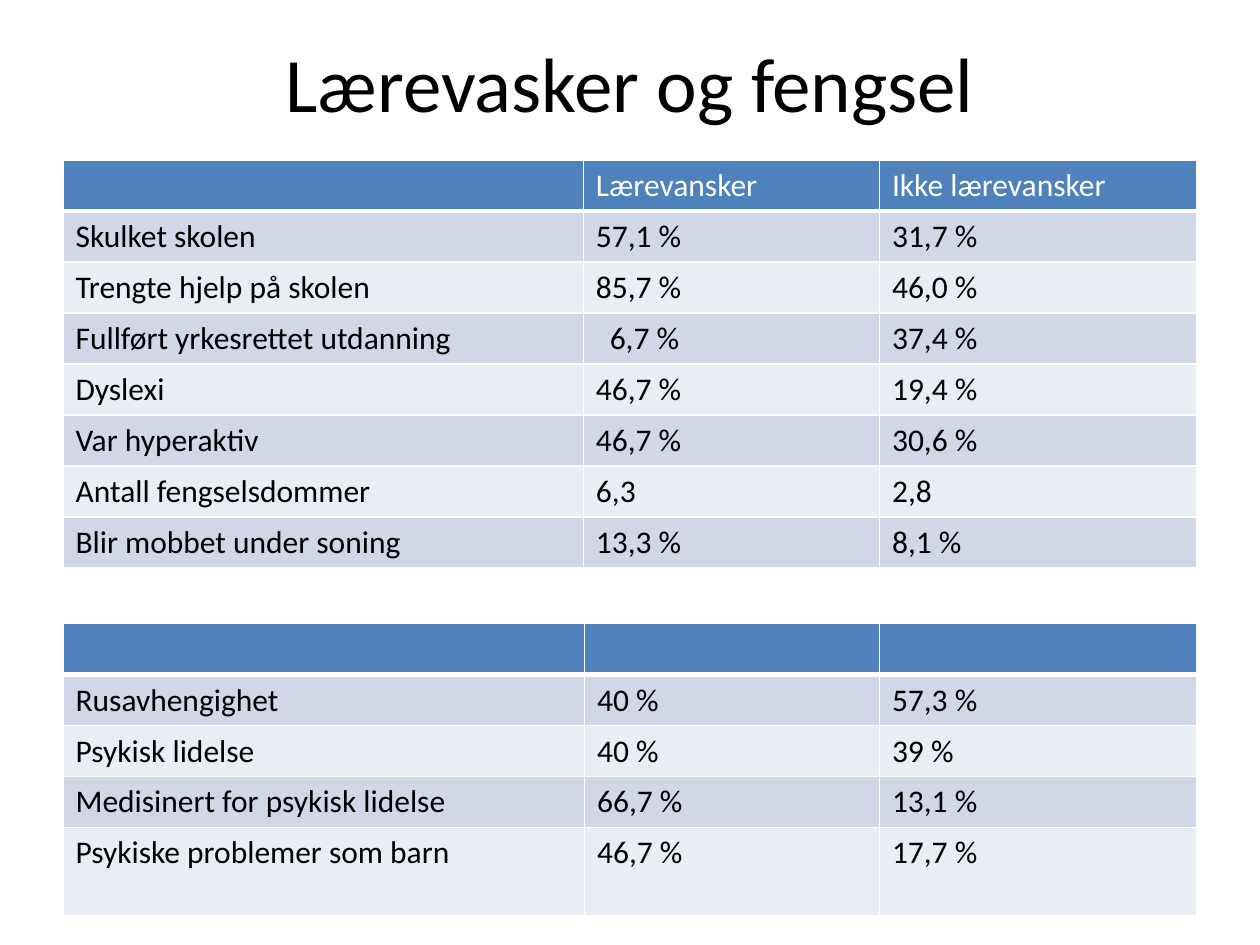
from dataclasses import dataclass
from lxml.etree import SubElement
from pptx import Presentation
from pptx.dml.color import RGBColor
from pptx.enum.text import MSO_ANCHOR, PP_ALIGN
from pptx.oxml.ns import qn
from pptx.util import Inches, Pt


@dataclass(frozen=True)
class Theme:
    font: str = "Calibri"
    title: int = 44
    body: int = 18
    ink: str = "000000"
    white: str = "FFFFFF"
    head: str = "4F81BD"
    bands: tuple = ("D0D8E8", "E9EDF4")
    thin: int = 1
    thick: int = 3


class Deck:
    def __init__(self, theme):
        self.theme = theme
        self.show = Presentation()
        self.show.slide_width, self.show.slide_height = Inches(10), Inches(7.5)
        self.slide = self.show.slides.add_slide(self.show.slide_layouts[6])

    def style(self, para, size, color):
        for run in para.runs:
            run.font.name = self.theme.font
            run.font.size = Pt(size)
            run.font.color.rgb = RGBColor.from_string(color)

    def title(self, text, left, top, width, height):
        box = self.slide.shapes.add_textbox(
            Inches(left), Inches(top), Inches(width), Inches(height))
        frame = box.text_frame
        frame.word_wrap = True
        frame.vertical_anchor = MSO_ANCHOR.MIDDLE
        frame.text = text
        para = frame.paragraphs[0]
        para.alignment = PP_ALIGN.CENTER
        self.style(para, self.theme.title, self.theme.ink)

    def border(self, cell, base):
        props = cell._tc.get_or_add_tcPr()
        for side in "LRTB":
            width = base if side == "B" else self.theme.thin
            line = SubElement(props, qn(f"a:ln{side}"), w=str(Pt(width)))
            fill = SubElement(line, qn("a:solidFill"))
            SubElement(fill, qn("a:srgbClr"), val=self.theme.white)

    def table(self, rows, left, top, widths, heights):
        look = self.theme
        table = self.slide.shapes.add_table(
            len(rows), len(widths), Inches(left), Inches(top),
            Inches(sum(widths)), Inches(sum(heights))).table
        for col, width in zip(table.columns, widths):
            col.width = Inches(width)
        for r, (row, height) in enumerate(zip(rows, heights)):
            table.rows[r].height = Inches(height)
            head = r == 0
            back = look.head if head else look.bands[(r - 1) % 2]
            for c, text in enumerate(row):
                cell = table.cell(r, c)
                self.border(cell, look.thick if head else look.thin)
                cell.fill.solid()
                cell.fill.fore_color.rgb = RGBColor.from_string(back)
                cell.text_frame.text = text
                self.style(cell.text_frame.paragraphs[0], look.body,
                           look.white if head else look.ink)
        return table


SCHOOL = [
    ("", "Lærevansker", "Ikke lærevansker"),
    ("Skulket skolen", "57,1 %", "31,7 %"),
    ("Trengte hjelp på skolen", "85,7 %", "46,0 %"),
    ("Fullført yrkesrettet utdanning", "6,7 %", "37,4 %"),
    ("Dyslexi", "46,7 %", "19,4 %"),
    ("Var hyperaktiv", "46,7 %", "30,6 %"),
    ("Antall fengselsdommer", "6,3", "2,8"),
    ("Blir mobbet under soning", "13,3 %", "8,1 %"),
]
HEALTH = [
    ("", "", ""),
    ("Rusavhengighet", "40 %", "57,3 %"),
    ("Psykisk lidelse", "40 %", "39 %"),
    ("Medisinert for psykisk lidelse", "66,7 %", "13,1 %"),
    ("Psykiske problemer som barn", "46,7 %", "17,7 %"),
]


def main():
    deck = Deck(Theme())
    left, row = 0.5, 3.24 / len(SCHOOL)
    deck.title("Lærevasker og fengsel", left, 0.02, 9, 1.25)
    school = deck.table(SCHOOL, left, 1.27, (4.13, 2.35, 2.52), [row] * len(SCHOOL))
    school.cell(3, 1).margin_left = Inches(0.21)
    deck.table(HEALTH, left, 4.95, (4.14, 2.34, 2.52), [row] * 4 + [0.7])
    deck.show.save("out.pptx")


if __name__ == "__main__":
    main()
